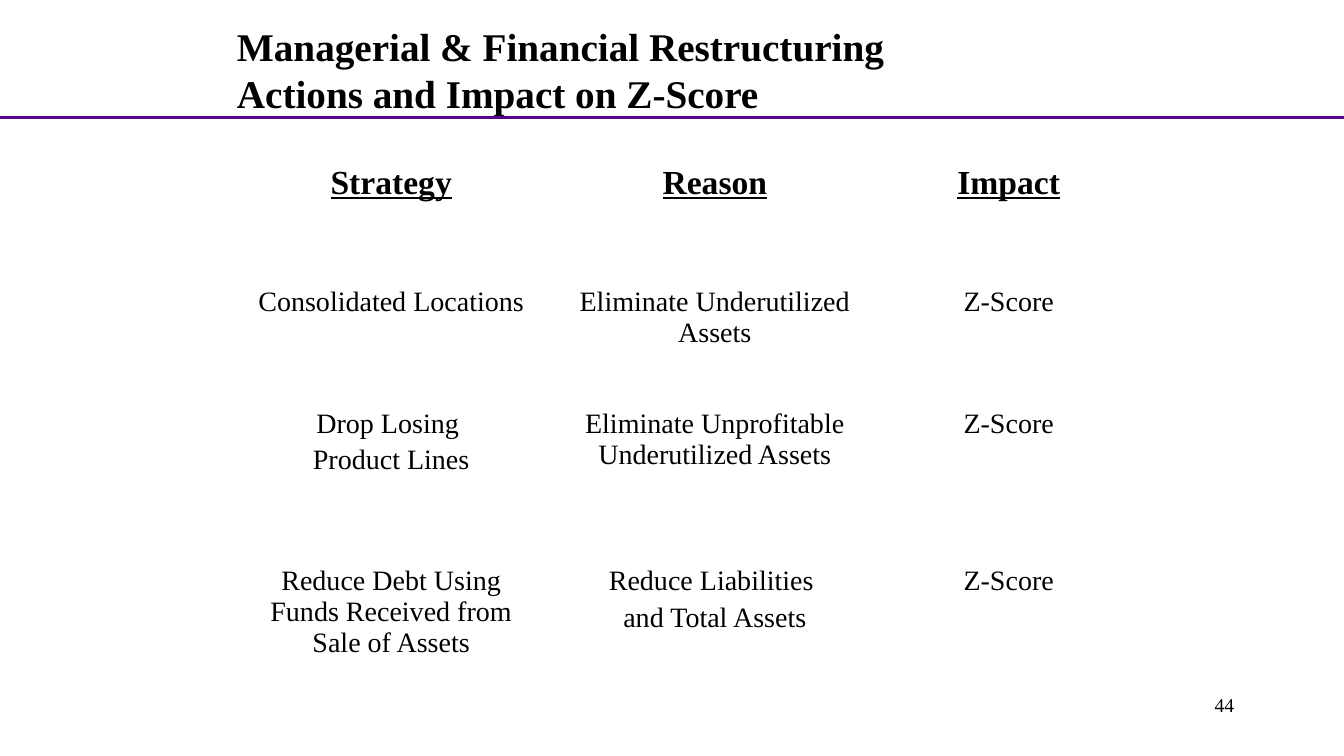
from lxml import etree
from pptx import Presentation
from pptx.dml.color import RGBColor
from pptx.enum.shapes import MSO_CONNECTOR
from pptx.enum.text import MSO_ANCHOR, MSO_AUTO_SIZE, PP_ALIGN
from pptx.oxml.ns import qn
from pptx.util import Inches, Pt

STRAIGHT = MSO_CONNECTOR.STRAIGHT
TOP, MIDDLE = MSO_ANCHOR.TOP, MSO_ANCHOR.MIDDLE
LEFT, CENTER, RIGHT = PP_ALIGN.LEFT, PP_ALIGN.CENTER, PP_ALIGN.RIGHT
GROW = MSO_AUTO_SIZE.SHAPE_TO_FIT_TEXT

COLORS = {"text": "000000", "rule": "57068C"}
FONT = "Times New Roman"
TITLE = {"size": Pt(28), "bold": True}
HEADER = {"size": Pt(24), "bold": True, "underline": True}
BODY = {"size": Pt(20), "bold": False}
NUMBER = {"size": Pt(14)}

COLUMN_WIDTHS = [2.92, 3.5, 2.33]
ROW_HEIGHTS = [1.21, 1.21, 1.56, 1.56]
STRATEGIES = [
    ["Strategy", "Reason", "Impact"],
    ["Consolidated Locations", "Eliminate Underutilized Assets", "Z-Score"],
    ["Drop Losing \nProduct Lines",
     "Eliminate Unprofitable Underutilized Assets", "Z-Score"],
    ["Reduce Debt Using Funds Received from Sale of Assets",
     "Reduce Liabilities \nand Total Assets", "Z-Score"],
]


class SlideBuilder:
    def __init__(self, presentation):
        self.slide = presentation.slides.add_slide(presentation.slide_layouts[5])
        self.shapes = self.slide.shapes

    def fill_text(self, frame, text, style, alignment, gap=0):
        """Fill a text frame, one paragraph a line, with a gap in points between."""
        frame.word_wrap = True
        frame.text = text
        for index, paragraph in enumerate(frame.paragraphs):
            paragraph.alignment = alignment
            paragraph.space_before = Pt(gap if index else 0)
            for run in paragraph.runs:
                run.font.name = FONT
                run.font.color.rgb = RGBColor.from_string(COLORS["text"])
                for name, value in style.items():
                    setattr(run.font, name, value)

    def title(self, text, left, top, width, height):
        shape = self.shapes.title
        shape.left, shape.top = Inches(left), Inches(top)
        shape.width, shape.height = Inches(width), Inches(height)
        self.fill_text(shape.text_frame, text, TITLE, LEFT)
        shape.text_frame.vertical_anchor = MIDDLE
        shape.text_frame.auto_size = GROW

    def text(self, text, left, top, width, height, style, alignment):
        box = self.shapes.add_textbox(
            Inches(left), Inches(top), Inches(width), Inches(height))
        self.fill_text(box.text_frame, text, style, alignment)
        box.text_frame.vertical_anchor = TOP

    def rule(self, y, width):
        line = self.shapes.add_connector(
            STRAIGHT, 0, Inches(y), Inches(width), Inches(y))
        line.line.color.rgb = RGBColor.from_string(COLORS["rule"])
        line.line.width = Pt(2.25)
        etree.SubElement(line.element.spPr, qn("a:effectLst"))

    def table(self, rows, left, top):
        table = self.shapes.add_table(
            len(rows), len(COLUMN_WIDTHS), Inches(left), Inches(top),
            Inches(sum(COLUMN_WIDTHS)), Inches(sum(ROW_HEIGHTS))).table
        table.first_row = table.horz_banding = False
        for column, width in zip(table.columns, COLUMN_WIDTHS):
            column.width = Inches(width)
        for row_index, (row, height) in enumerate(zip(table.rows, ROW_HEIGHTS)):
            row.height = Inches(height)
            style = BODY if row_index else HEADER
            for cell, text in zip(row.cells, rows[row_index]):
                cell.fill.background()
                cell.vertical_anchor = TOP
                self.fill_text(cell.text_frame, text, style, CENTER, gap=4)


def main():
    presentation = Presentation()
    presentation.slide_width = Inches(13.33)
    presentation.slide_height = Inches(7.5)
    builder = SlideBuilder(presentation)
    builder.rule(1.17, 13.33)
    builder.table(STRATEGIES, 2.42, 1.58)
    builder.title("Managerial & Financial Restructuring\nActions and Impact on Z-Score",
                  2.25, 0.17, 8.83, 1.04)
    builder.text("44", 9.56, 6.83, 2.78, 0.5, NUMBER, RIGHT)
    presentation.save("out.pptx")


if __name__ == "__main__":
    main()
